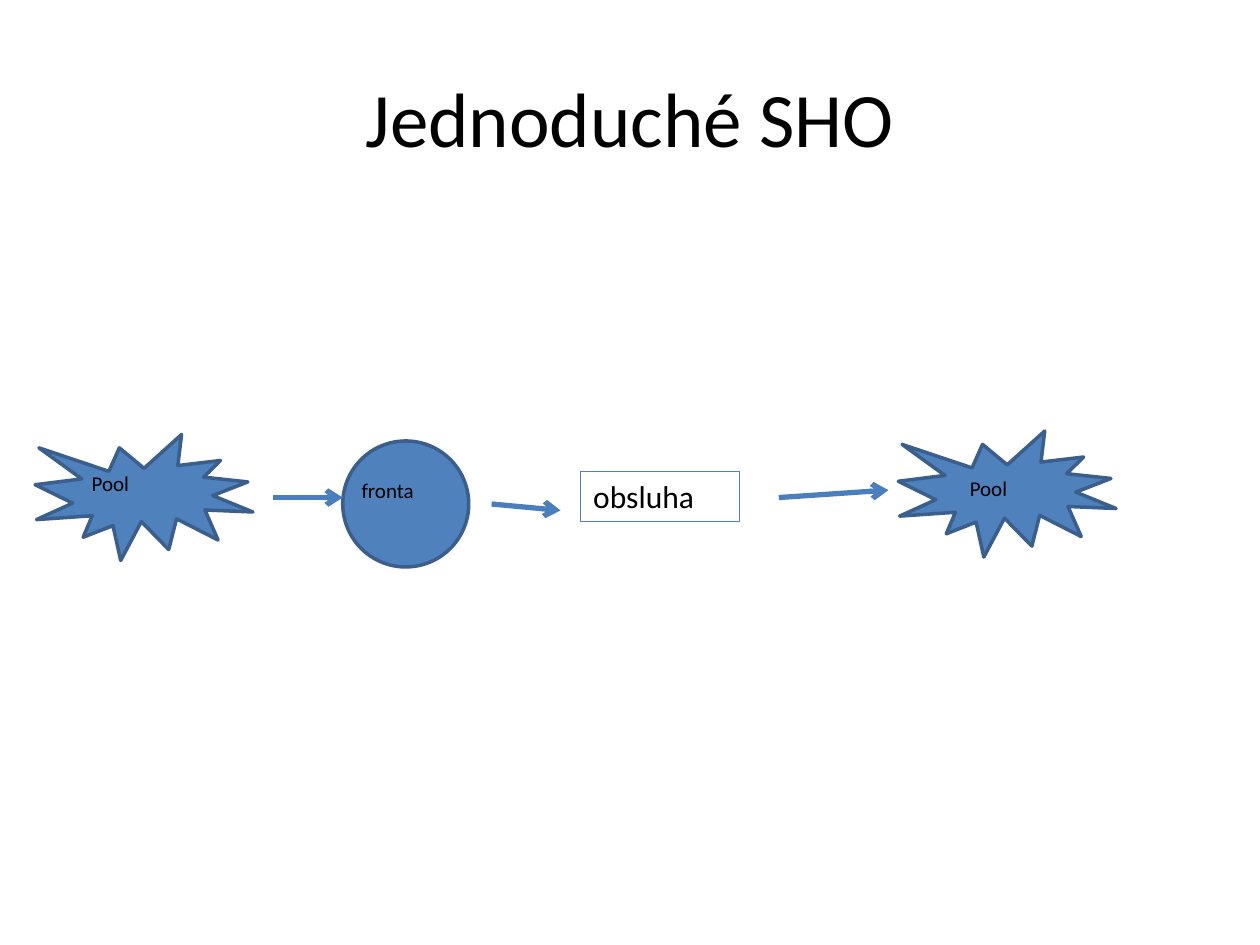
from lxml import etree
from pptx import Presentation
from pptx import util as u
from pptx.dml.color import RGBColor
from pptx.enum import shapes, text
from pptx.oxml.ns import qn

BLACK = RGBColor(0x00, 0x00, 0x00)
BLUE = RGBColor(0x4F, 0x81, 0xBD)
DARK_BLUE = RGBColor(0x3A, 0x5F, 0x8C)
ARROW_BLUE = RGBColor(0x4B, 0x7E, 0xBC)


class QueueDiagram:
    font_name = "Calibri"

    def __init__(self, slide):
        self.shapes = slide.shapes

    def set_text(self, frame, wording, size, align=text.PP_ALIGN.LEFT):
        frame.word_wrap = True
        line = frame.paragraphs[0]
        line.text = wording
        line.alignment = align
        line.font.name = self.font_name
        line.font.size = u.Pt(size)
        line.font.color.rgb = BLACK

    def title(self, wording):
        box = self.shapes.add_textbox(u.Cm(1.27), u.Cm(0.76), u.Cm(22.86), u.Cm(3.18))
        box.text_frame.vertical_anchor = text.MSO_ANCHOR.MIDDLE
        self.set_text(box.text_frame, wording, 44, text.PP_ALIGN.CENTER)

    def label(self, wording, left, top):
        box = self.shapes.add_textbox(u.Cm(left), u.Cm(top), u.Cm(2.59), u.Cm(0.76))
        self.set_text(box.text_frame, wording, 12)

    def node(self, kind, left, top, width, height=2.54, line=DARK_BLUE, weight=2):
        node = self.shapes.add_shape(kind, u.Cm(left), u.Cm(top), u.Cm(width), u.Cm(height))
        node.shadow.inherit = False
        node.fill.solid()
        node.fill.fore_color.rgb = BLUE
        node.line.color.rgb = line
        node.line.width = u.Pt(weight)
        return node

    def pool(self, left, top, label_left, label_top):
        self.node(shapes.MSO_SHAPE.EXPLOSION1, left, top, 4.39)
        self.label("Pool", label_left, label_top)

    def queue(self, wording):
        self.node(shapes.MSO_SHAPE.OVAL, 6.91, 8.89, 2.54)
        self.label(wording, 7.04, 9.5)

    def service(self, wording):
        server = self.node(shapes.MSO_SHAPE.RECTANGLE, 11.71, 9.5, 3.2, 1.02, BLUE, 0.75)
        server.fill.background()
        server.text_frame.vertical_anchor = text.MSO_ANCHOR.TOP
        self.set_text(server.text_frame, wording, 18)

    def arrow(self, *ends):
        arrow = self.shapes.add_connector(
            shapes.MSO_CONNECTOR.STRAIGHT, *(u.Cm(end) for end in ends))
        arrow.line.color.rgb = ARROW_BLUE
        arrow.line.width = u.Pt(3)
        properties = arrow.element.spPr
        etree.SubElement(properties.find(qn("a:ln")), qn("a:tailEnd"), type="arrow")
        etree.SubElement(properties, qn("a:effectLst"))


def main():
    deck = Presentation()
    deck.slide_width, deck.slide_height = u.Cm(25.4), u.Cm(19.05)
    diagram = QueueDiagram(deck.slides.add_slide(deck.slide_layouts[6]))

    diagram.title("Jednoduché SHO")
    diagram.pool(0.71, 8.76, 1.6, 9.37)
    diagram.queue("fronta")
    diagram.service("obsluha")
    diagram.pool(18.11, 8.69, 19.3, 9.47)

    diagram.arrow(5.51, 10.03, 6.91, 10.03)
    diagram.arrow(9.91, 10.16, 11.3, 10.29)
    diagram.arrow(15.7, 10.03, 17.91, 9.88)

    deck.save("out.pptx")


if __name__ == "__main__":
    main()
